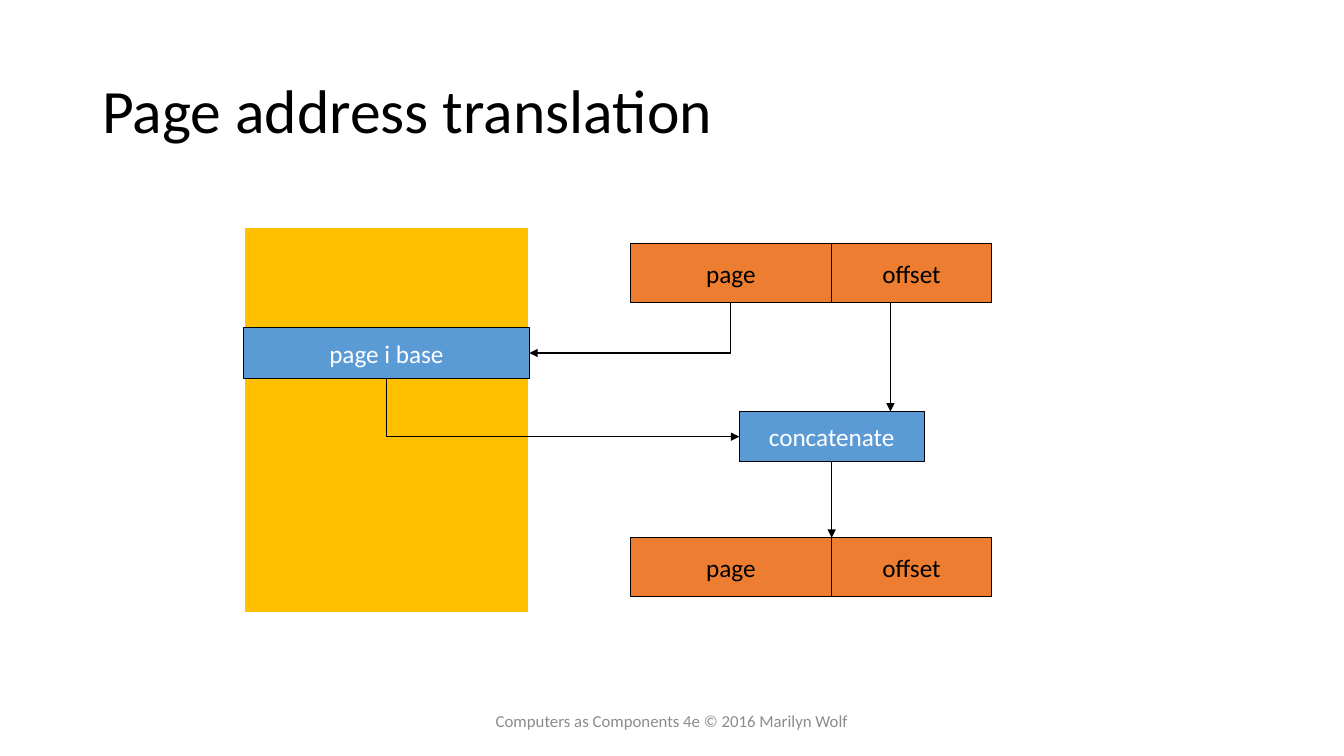
import pptx
import pptx.dml.color
import pptx.enum.shapes
import pptx.enum.text
import pptx.oxml.ns
import pptx.oxml.xmlchemy
import pptx.util

Cm = pptx.util.Cm
Pt = pptx.util.Pt
RGBColor = pptx.dml.color.RGBColor
PP_ALIGN = pptx.enum.text.PP_ALIGN
CONNECTOR = pptx.enum.shapes.MSO_CONNECTOR
OxmlElement = pptx.oxml.xmlchemy.OxmlElement
qn = pptx.oxml.ns.qn

BLACK = RGBColor(0x00, 0x00, 0x00)
WHITE = RGBColor(0xFF, 0xFF, 0xFF)
GRAY = RGBColor(0x8C, 0x8C, 0x8C)
ORANGE = RGBColor(0xED, 0x7D, 0x31)
GOLD = RGBColor(0xFF, 0xC0, 0x00)
BLUE = RGBColor(0x5B, 0x9B, 0xD5)

BOTTOM, LEFT, RIGHT = 2, 1, 3

deck = pptx.Presentation()
deck.slide_width = Cm(33.87)
deck.slide_height = Cm(19.05)
slide = deck.slides.add_slide(deck.slide_layouts[6])


def write(holder, text, size, color, align, wrap):
    frame = holder.text_frame
    frame.word_wrap = wrap
    frame.vertical_anchor = pptx.enum.text.MSO_ANCHOR.MIDDLE
    paragraph = frame.paragraphs[0]
    paragraph.alignment = align
    run = paragraph.add_run()
    run.text = text
    font_format = {"name": "Calibri", "size": Pt(size)}
    for attribute, value in font_format.items():
        setattr(run.font, attribute, value)
    run.font.color.rgb = color
    return paragraph


def add_box(left, top, width, height, fill, line=BLACK, weight=0.75):
    box = slide.shapes.add_shape(
        pptx.enum.shapes.MSO_SHAPE.RECTANGLE, Cm(left), Cm(top), Cm(width), Cm(height))
    box.shadow.inherit = False
    box.fill.solid()
    box.fill.fore_color.rgb = fill
    box.line.color.rgb = line
    box.line.width = Pt(weight)
    return box


# Title and footer
title = slide.shapes.add_textbox(Cm(2.33), Cm(1.01), Cm(29.21), Cm(3.68))
heading = write(title, "Page address translation", 44, BLACK, PP_ALIGN.LEFT, True)
heading.line_spacing = 0.9
footer = slide.shapes.add_textbox(Cm(11.22), Cm(17.66), Cm(11.43), Cm(1.01))
write(footer, "Computers as Components 4e © 2016 Marilyn Wolf", 12, GRAY,
      PP_ALIGN.CENTER, True)

# Logical address above, physical address below
address_fields = []
for top in (6.14, 13.55):
    for text, left, width in (("page", 15.88, 5.08), ("offset", 20.96, 4.02)):
        field = add_box(left, top, width, 1.48, ORANGE)
        write(field, text, 18, BLACK, PP_ALIGN.CENTER, False)
        address_fields.append(field)
logical_page, logical_offset, physical_page, physical_offset = address_fields

# Page table with its entry, and the concatenation step
add_box(6.14, 5.72, 7.2, 9.74, GOLD, WHITE, 1.5)
page_base = add_box(6.14, 8.26, 7.2, 1.27, BLUE)
write(page_base, "page i base", 18, WHITE, PP_ALIGN.CENTER, False)
concatenate = add_box(18.63, 10.37, 4.66, 1.27, BLUE)
write(concatenate, "concatenate", 18, WHITE, PP_ALIGN.CENTER, False)

# Straight arrows
result_arrow = slide.shapes.add_connector(
    CONNECTOR.STRAIGHT, 0, 0, physical_offset.left, physical_offset.top)
result_arrow.begin_connect(concatenate, BOTTOM)
offset_arrow = slide.shapes.add_connector(
    CONNECTOR.STRAIGHT, Cm(22.44), logical_offset.top + logical_offset.height,
    Cm(22.44), concatenate.top)
arrows = [result_arrow, offset_arrow]

# Bent arrows: down, then sideways, as a quarter-turned one-corner connector
for source, target, side, turn in (
        (logical_page, page_base, RIGHT, {"rot": "5400000"}),
        (page_base, concatenate, LEFT, {"rot": "16200000", "flipH": "1"})):
    bend = slide.shapes.add_connector(CONNECTOR.ELBOW, 0, 0, 0, 0)
    bend.begin_connect(source, BOTTOM)
    bend.end_connect(target, side)
    across, down = bend.width, bend.height
    center_x, center_y = bend.left + across // 2, bend.top + down // 2
    turned_frame = {"left": center_x - down // 2, "top": center_y - across // 2,
                    "width": down, "height": across}
    for attribute, value in turned_frame.items():
        setattr(bend, attribute, value)
    properties = bend._element.spPr
    transform = properties.find(qn("a:xfrm"))
    transform.attrib.pop("flipH", None)
    transform.attrib.pop("flipV", None)
    for attribute, value in turn.items():
        transform.set(attribute, value)
    properties.find(qn("a:prstGeom")).set("prst", "bentConnector2")
    arrows.append(bend)

# Line style and arrowheads
for arrow in arrows:
    arrow.line.color.rgb = BLACK
    arrow.line.width = Pt(0.75)
    tip = OxmlElement("a:tailEnd")
    tip.set("type", "triangle")
    arrow.line._get_or_add_ln().append(tip)
    arrow._element.spPr.append(OxmlElement("a:effectLst"))

deck.save("out.pptx")
